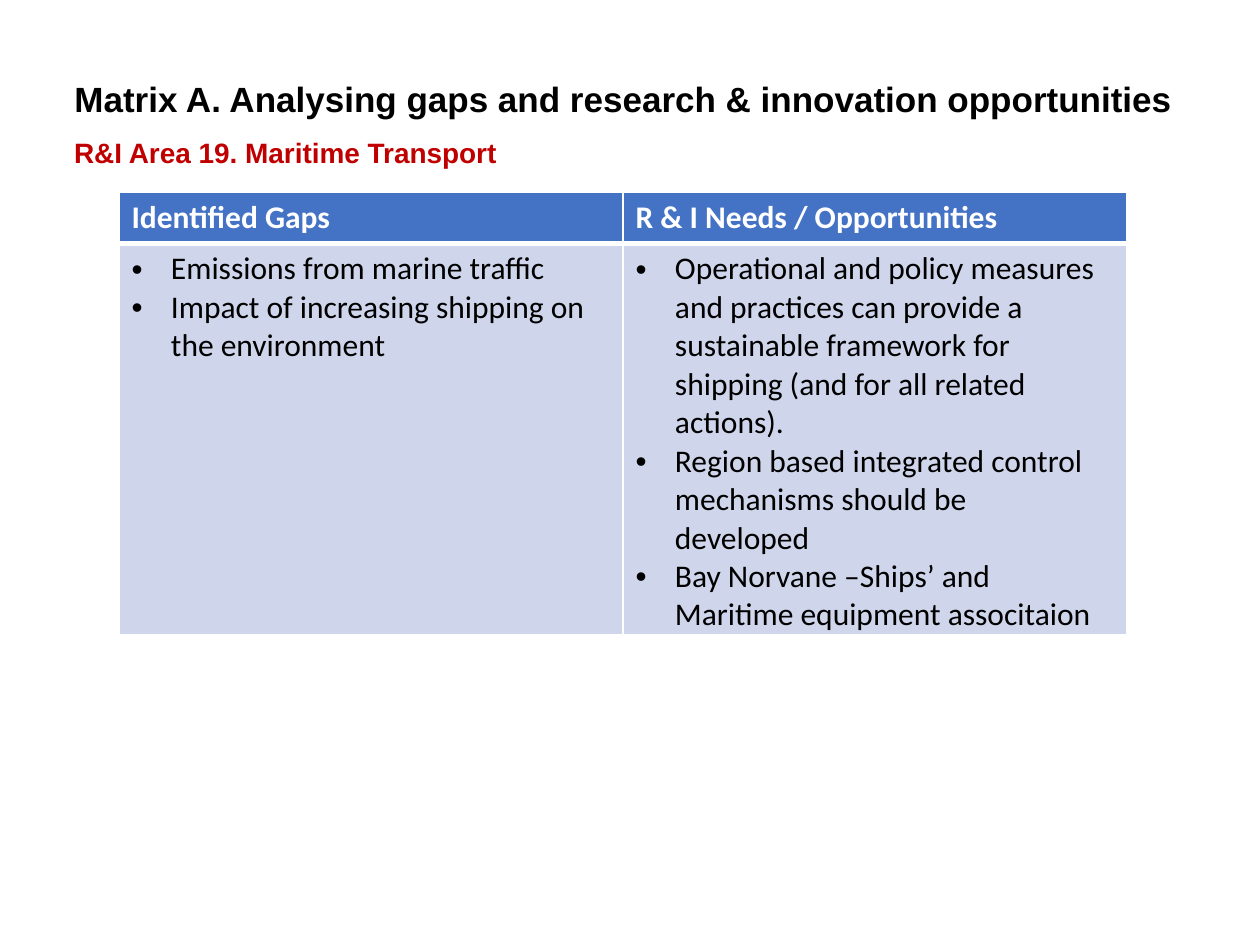
from dataclasses import dataclass

from lxml.etree import SubElement
from pptx import Presentation
from pptx.dml.color import RGBColor as RGB
from pptx.enum.text import MSO_ANCHOR as Anchor, MSO_AUTO_SIZE as AutoSize, PP_ALIGN as Align
from pptx.oxml.ns import qn
from pptx.util import Pt


@dataclass(frozen=True)
class Theme:
    black: RGB = RGB(0, 0, 0)
    white: RGB = RGB(255, 255, 255)
    red: RGB = RGB(0xC0, 0, 0)
    header: RGB = RGB(0x44, 0x72, 0xC4)
    band: RGB = RGB(0xCF, 0xD5, 0xEA)
    title_size: float = 20
    subtitle_size: float = 16
    cell_size: float = 18
    heading_font: str = "Arial"
    table_font: str = "Calibri"


T = Theme()
INDENT = Pt(22.5)
MATRIX = {
    "Identified Gaps": [
        "Emissions from marine traffic",
        "Impact of increasing shipping on the environment",
    ],
    "R & I Needs / Opportunities": [
        "Operational and policy measures and practices can provide a sustainable "
        "framework for shipping (and for all related actions).",
        "Region based integrated control mechanisms should be developed\u00a0",
        "Bay Norvane –Ships’ and Maritime equipment associtaion",
    ],
}


def write(p, text, *, size, color, font, bold=False, bullet=False):
    p.alignment = Align.LEFT
    r = p.add_run()
    r.text = text
    r.font.size, r.font.name, r.font.bold = Pt(size), font, bold
    r.font.color.rgb = color
    if bullet:
        pPr = p._p.get_or_add_pPr()
        pPr.set("marL", str(INDENT))
        pPr.set("indent", str(-INDENT))
        SubElement(pPr, qn("a:buFont"), typeface="Arial")
        SubElement(pPr, qn("a:buChar"), char="•")


def set_borders(cell, color, **widths):
    tcPr = cell._tc.get_or_add_tcPr()
    for side in "LRTB":
        ln = SubElement(tcPr, qn(f"a:ln{side}"), w=str(Pt(widths.get(side, 1))))
        fill = SubElement(ln, qn("a:solidFill"))
        SubElement(fill, qn("a:srgbClr"), val=str(color))


def add_heading(s, x, y, w, title, subtitle):
    sp = s.shapes.title
    sp.left, sp.top, sp.width, sp.height = Pt(x), Pt(y), Pt(w), Pt(42.5)
    tf = sp.text_frame
    tf.auto_size, tf.vertical_anchor = AutoSize.NONE, Anchor.MIDDLE
    write(tf.paragraphs[0], title, size=T.title_size, color=T.black,
          font=T.heading_font, bold=True)

    sp = s.shapes.add_textbox(Pt(x), Pt(y + 38.5), Pt(556.5), Pt(26.6))
    tf = sp.text_frame
    tf.word_wrap, tf.auto_size = True, AutoSize.SHAPE_TO_FIT_TEXT
    write(tf.paragraphs[0], subtitle, size=T.subtitle_size, color=T.red,
          font=T.heading_font, bold=True)


def add_matrix(s, x, y, w, columns, heights):
    frame = s.shapes.add_table(2, len(columns), Pt(x), Pt(y), Pt(w), Pt(sum(heights)))
    table = frame.table
    for row, height in zip(table.rows, heights):
        row.height = Pt(height)
    for i, (heading, items) in enumerate(columns.items()):
        head, body = table.cell(0, i), table.cell(1, i)
        set_borders(head, T.white, B=3)
        set_borders(body, T.white, T=3)
        for cell, color in ((head, T.header), (body, T.band)):
            cell.fill.solid()
            cell.fill.fore_color.rgb = color
        write(head.text_frame.paragraphs[0], heading, size=T.cell_size,
              color=T.white, font=T.table_font, bold=True)
        tf = body.text_frame
        for n, item in enumerate(items):
            p = tf.add_paragraph() if n else tf.paragraphs[0]
            write(p, item, size=T.cell_size, color=T.black,
                  font=T.table_font, bullet=True)


def main():
    prs = Presentation()
    prs.slide_width, prs.slide_height = Pt(720), Pt(540)
    s = prs.slides.add_slide(prs.slide_layouts[5])
    add_heading(s, 35.3, 35.3, 646.5,
                "Matrix A. Analysing gaps and research & innovation opportunities",
                "R&I Area 19. Maritime Transport")
    add_matrix(s, 68, 110, 576, MATRIX, (29.2, 223.5))
    prs.save("out.pptx")


if __name__ == "__main__":
    main()
